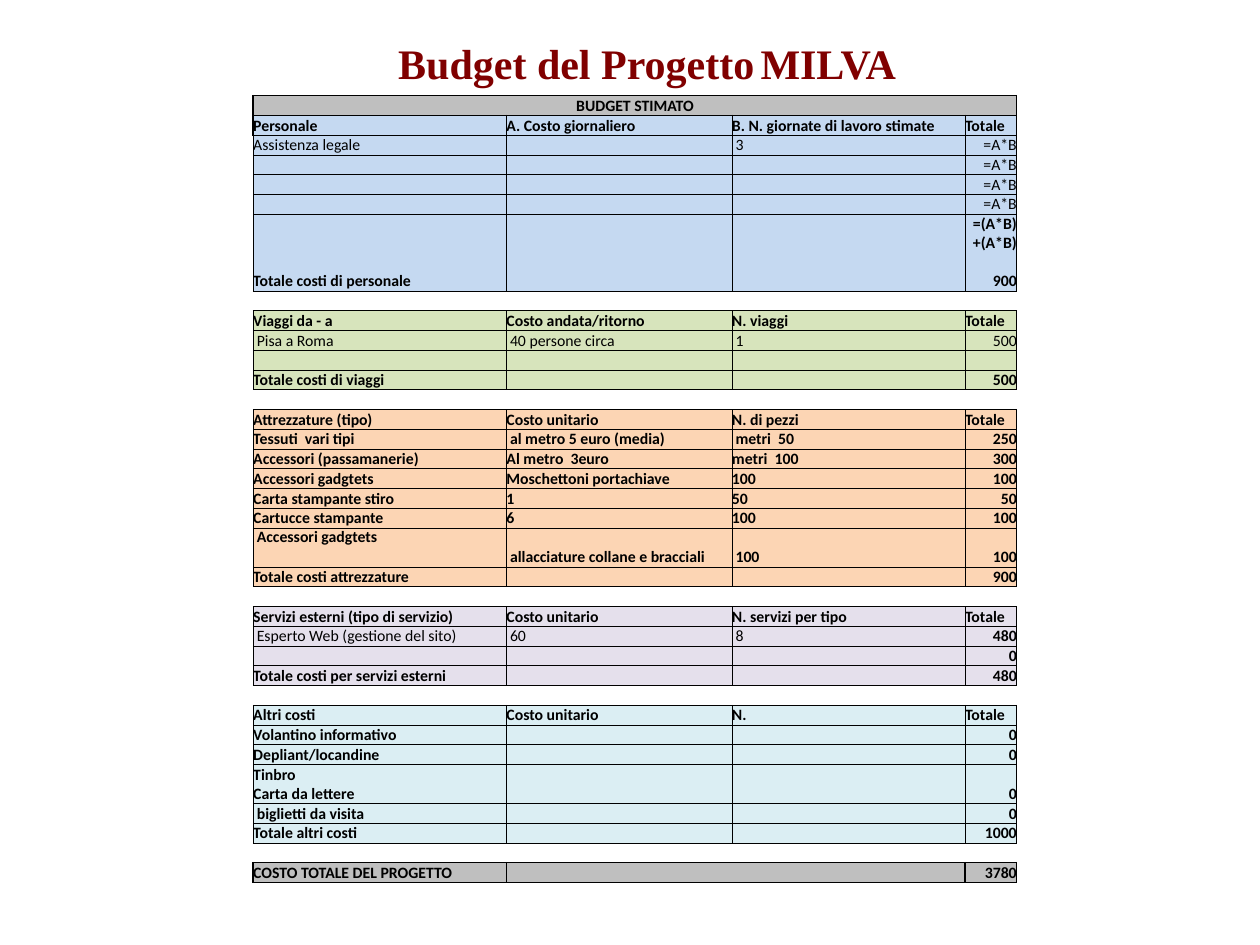
"""Build the project budget slide with its table of estimated costs."""
from lxml import etree
from pptx import Presentation
from pptx import util as u
from pptx.dml.color import RGBColor
from pptx.enum import text
from pptx.oxml.ns import qn

HEX = {"title": "800000", "ink": "000000", "grey": "BFBFBF", "blue": "C5D9F1",
       "green": "D7E4BC", "peach": "FCD5B4", "lilac": "E5E0EC", "aqua": "DBEEF3"}
COLS = (2.01, 1.79, 1.85, 0.41)
TALL = {6: 0.61, 19: 0.31, 30: 0.31}
HIGH = 6.25
LIGHT = (2, 3, 4, 5, 9, 23)
GROUPS = [
    ("grey", [("BUDGET STIMATO", "", "", "")]),
    ("blue", [
        ("Personale", "A. Costo giornaliero", "B. N. giornate di lavoro stimate", "Totale"),
        ("Assistenza legale", "", " 3", "=A*B"),
        ("", "", "", "=A*B"),
        ("", "", "", "=A*B"),
        ("", "", "", "=A*B"),
        ("Totale costi di personale", "", "", "=(A*B)+(A*B)\n900")]),
    (None, [("", "", "", "")]),
    ("green", [
        ("Viaggi da - a", "Costo andata/ritorno", "N. viaggi", "Totale"),
        (" Pisa a Roma", " 40 persone circa", " 1", "500"),
        ("", "", "", ""),
        ("Totale costi di viaggi", "", "", "500")]),
    (None, [("", "", "", "")]),
    ("peach", [
        ("Attrezzature (tipo)", "Costo unitario", "N. di pezzi", "Totale"),
        ("Tessuti  vari tipi", " al metro 5 euro (media)", " metri  50", "250"),
        ("Accessori (passamanerie)", "Al metro  3euro", "metri  100", "300"),
        ("Accessori gadgtets", "Moschettoni portachiave", "100", "100"),
        ("Carta stampante stiro", "1", "50", "50"),
        ("Cartucce stampante", "6", "100", "100"),
        (" Accessori gadgtets", " allacciature collane e bracciali", " 100", "100"),
        ("Totale costi attrezzature", "", "", "900")]),
    (None, [("", "", "", "")]),
    ("lilac", [
        ("Servizi esterni (tipo di servizio)", "Costo unitario", "N. servizi per tipo", "Totale"),
        (" Esperto Web (gestione del sito)", " 60", " 8", "480"),
        ("", "", "", "0"),
        ("Totale costi per servizi esterni", "", "", "480")]),
    (None, [("", "", "", "")]),
    ("aqua", [
        ("Altri costi", "Costo unitario", "N.", "Totale"),
        ("Volantino informativo", "", "", "0"),
        ("Depliant/locandine", "", "", "0"),
        ("Tinbro\nCarta da lettere", "", "", "0"),
        (" biglietti da visita", "", "", "0"),
        ("Totale altri costi", "", "", "1000")]),
    (None, [("", "", "", "")]),
    ("grey", [("COSTO TOTALE DEL PROGETTO", "", "", "3780")]),
]


def style(font, face, size, tint, bold=True):
    """Set the look of a font."""
    font.name, font.size, font.bold = face, u.Pt(size), bold
    font.color.rgb = RGBColor.from_string(HEX[tint])


def add_title(slide):
    """Place and format the title."""
    box = slide.shapes.title
    box.left, box.top, box.width, box.height = map(u.Inches, (1.54, 0.21, 7.19, 0.64))
    frame = box.text_frame
    frame.margin_top = u.Inches(0.09)
    frame.vertical_anchor = text.MSO_ANCHOR.TOP
    para = frame.paragraphs[0]
    para.alignment = text.PP_ALIGN.CENTER
    for part, size in (("Budget del Progetto", 24), (" ", 14), ("MILVA", 24)):
        run = para.add_run()
        run.text = part
        style(run.font, "Times New Roman", size, "title")


def edge(cell, widths):
    """Draw the left, right, top and bottom borders, in points."""
    props = cell._tc.get_or_add_tcPr()
    for side, width in zip("LRTB", widths):
        line = etree.SubElement(props, qn(f"a:ln{side}"), w=str(int(u.Pt(width))))
        if width:
            fill = etree.SubElement(line, qn("a:solidFill"))
            etree.SubElement(fill, qn("a:srgbClr"), val=HEX["ink"])
        else:
            etree.SubElement(line, qn("a:noFill"))


def borders(row, col, last, tint):
    """Return the border widths of a cell."""
    if row == 0:
        return 1, 1, 1, 1
    if row == last:
        return 0 if col == 2 else 1, 0 if col == 1 else 1, 1, 1
    if tint is None:
        return 0, 0, 0.5, 1 if row == last - 1 else 0.5
    return 1 if (row, col) == (1, 0) else 0.5, 0.5, 1 if row == 1 else 0.5, 0.5


def fill_cell(cell, words, tint, bold, align):
    """Write one cell and set its fill and text."""
    cell.margin_left = cell.margin_right = cell.margin_top = cell.margin_bottom = 0
    cell.vertical_anchor = text.MSO_ANCHOR.BOTTOM
    if tint:
        cell.fill.solid()
        cell.fill.fore_color.rgb = RGBColor.from_string(HEX[tint])
    else:
        cell.fill.background()
    cell.text_frame.text = words
    for para in cell.text_frame.paragraphs:
        para.alignment = align
        for run in para.runs:
            style(run.font, "Calibri", 9, "ink", bold)
        if not para.runs:
            end = etree.SubElement(para._p, qn("a:endParaRPr"), sz="900")
            etree.SubElement(end, qn("a:latin"), typeface="Calibri")


def add_budget(slide):
    """Add the budget table."""
    rows = [(tint, row) for tint, group in GROUPS for row in group]
    last = len(rows) - 1
    frame = slide.shapes.add_table(len(rows), len(COLS), u.Inches(2.01), u.Inches(0.76),
                                   u.Inches(sum(COLS)), u.Inches(HIGH))
    table = frame.table
    table.first_row = table.horz_banding = False
    for col, width in enumerate(COLS):
        table.columns[col].width = u.Inches(width)
    unit = (HIGH - sum(TALL.values())) / (len(rows) - len(TALL))
    for i, (tint, row) in enumerate(rows):
        table.rows[i].height = u.Inches(TALL.get(i, unit))
        for j, words in enumerate(row):
            cell = table.cell(i, j)
            edge(cell, borders(i, j, last, tint))
            right = j == 3 and words != "Totale"
            align = text.PP_ALIGN.RIGHT if right else text.PP_ALIGN.LEFT
            bold = i not in LIGHT or (i, j) == (23, 3)
            fill_cell(cell, words, tint, bold, align)
    table.cell(0, 0).merge(table.cell(0, 3))
    table.cell(0, 0).text_frame.paragraphs[0].alignment = text.PP_ALIGN.CENTER
    table.cell(6, 3).text_frame.paragraphs[1].space_before = u.Pt(11)
    table.cell(19, 0).vertical_anchor = text.MSO_ANCHOR.TOP


def main():
    """Build and save the slide."""
    deck = Presentation()
    deck.slide_width, deck.slide_height = u.Inches(10), u.Inches(7.5)
    slide = deck.slides.add_slide(deck.slide_layouts[5])
    add_title(slide)
    add_budget(slide)
    deck.save("out.pptx")


if __name__ == "__main__":
    main()
